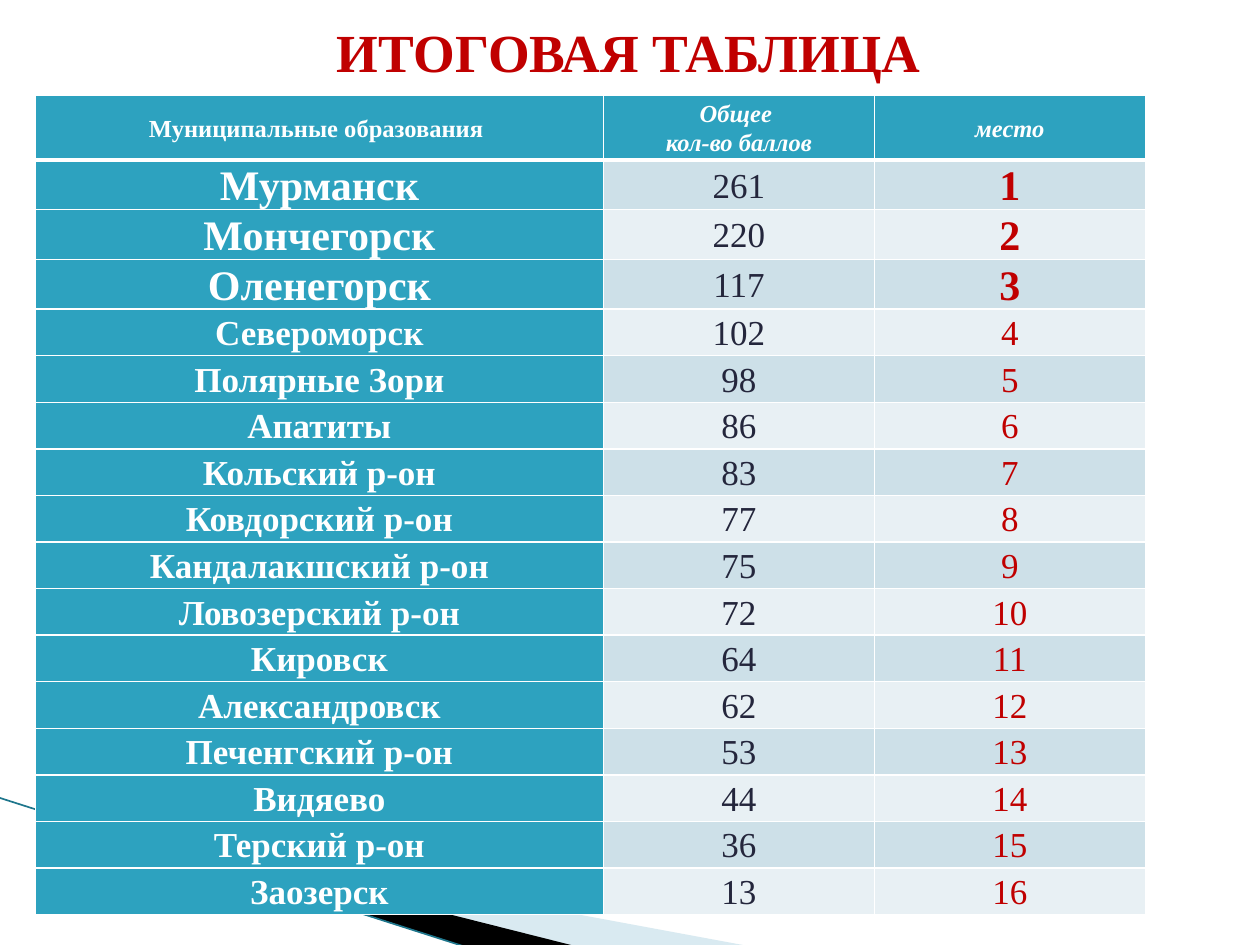
from lxml import etree
from pptx import Presentation
from pptx.dml.color import RGBColor
from pptx.enum.shapes import MSO_CONNECTOR
from pptx.enum.text import MSO_ANCHOR, PP_ALIGN
from pptx.oxml.ns import qn
from pptx.util import Inches, Pt

COLORS = {
    "title": "C00000", "place": "C00000", "score": "24263C",
    "white": "FFFFFF", "teal": "2DA2BF", "odd": "CDE0E8", "even": "E8F0F4",
    "ribbon": "A0CBDC", "black": "000000", "edge": "1E768C",
}
FONT = "Times New Roman"
HEADERS = ["Муниципальные образования ", "Общее \nкол-во баллов", "место"]
RESULTS = [
    ("Мурманск", 261), ("Мончегорск", 220), ("Оленегорск", 117),
    ("Североморск", 102), ("Полярные Зори", 98), ("Апатиты", 86),
    ("Кольский р-он", 83), ("Ковдорский р-он", 77),
    ("Кандалакшский р-он", 75), ("Ловозерский р-он", 72),
    ("Кировск", 64), ("Александровск", 62), ("Печенгский р-он", 53),
    ("Видяево", 44), ("Терский р-он", 36), ("Заозерск", 13),
]
WINNERS = 3


def rgb(name):
    return RGBColor.from_string(COLORS[name])


def add_text(tf, text, size=20, color="white", bold=False, italic=False,
             spacing=None):
    tf.word_wrap = True
    for i, line in enumerate(text.split("\n")):
        p = tf.paragraphs[0] if i == 0 else tf.add_paragraph()
        p.alignment = PP_ALIGN.CENTER
        if spacing:
            p.line_spacing = spacing
        r = p.add_run()
        r.text = line
        r.font.name, r.font.size = FONT, Pt(size)
        r.font.bold, r.font.italic = bold, italic
        r.font.color.rgb = rgb(color)


def set_borders(cell, top=1, bottom=1):
    tcPr = cell._tc.get_or_add_tcPr()
    widths = {"a:lnL": 1, "a:lnR": 1, "a:lnT": top, "a:lnB": bottom}
    for tag, width in widths.items():
        ln = etree.SubElement(tcPr, qn(tag), w=str(Pt(width)))
        fill = etree.SubElement(ln, qn("a:solidFill"))
        etree.SubElement(fill, qn("a:srgbClr"), val=COLORS["white"])


def add_wedge(s, x, y, points, color, alpha=None):
    corners = [(Inches(x + dx), Inches(y + dy)) for dx, dy in points]
    builder = s.shapes.build_freeform(*corners[0])
    builder.add_line_segments(corners[1:])
    sp = builder.convert_to_shape()
    sp.shadow.inherit = False
    sp.fill.solid()
    sp.fill.fore_color.rgb = rgb(color)
    sp.line.fill.background()
    if alpha:
        clr = sp._element.spPr.find(".//" + qn("a:srgbClr"))
        etree.SubElement(clr, qn("a:alpha"), val=str(alpha * 1000))


def add_ribbons(s, x, y):
    """Slanted bands at the lower left corner."""
    add_wedge(s, x, y, [(0.56, 0.18), (5.96, 1.18), (4.57, 1.18), (0.56, 0.17)],
              "ribbon", alpha=40)
    add_wedge(s, x, y, [(0.54, 0.16), (4.58, 1.18), (3.73, 1.19), (0.55, 0.17)],
              "black")
    edge = s.shapes.add_connector(MSO_CONNECTOR.STRAIGHT, Inches(x), Inches(y),
                                  Inches(x + 3.72), Inches(y + 1.19))
    edge.line.color.rgb = rgb("edge")
    edge.line.width = Pt(0.95)
    etree.SubElement(edge._element.spPr, qn("a:effectLst"))


def add_cell(cell, text, fill, top=1, bottom=1, **fmt):
    cell.margin_left = cell.margin_right = Inches(0.07)
    cell.margin_top = cell.margin_bottom = 0
    cell.vertical_anchor = MSO_ANCHOR.MIDDLE
    set_borders(cell, top, bottom)
    cell.fill.solid()
    cell.fill.fore_color.rgb = rgb(fill)
    add_text(cell.text_frame, text, spacing=1.07, **fmt)


def add_results(s, x, y, w, h):
    """Table of municipalities, ranked by score."""
    table = s.shapes.add_table(len(RESULTS) + 1, len(HEADERS), Inches(x),
                               Inches(y), Inches(w), Inches(h)).table
    for col, width in zip(table.columns, (w - 4.3, 2.15, 2.15)):
        col.width = Inches(width)
    for i, row in enumerate(table.rows):
        row.height = Inches(0.37 if i else 0.51)

    # Header row
    for c, text in enumerate(HEADERS):
        add_cell(table.cell(0, c), text, "teal", bottom=3, size=14,
                 bold=True, italic=c > 0)

    # One row per municipality, the winners larger
    for place, (name, score) in enumerate(RESULTS, 1):
        winner = place <= WINNERS
        size = 24 if winner else 20
        band = "odd" if place % 2 else "even"
        top = 3 if place == 1 else 1
        add_cell(table.cell(place, 0), name, "teal", top, size=size, bold=True)
        add_cell(table.cell(place, 1), str(score), band, top, color="score")
        add_cell(table.cell(place, 2), str(place), band, top, size=size,
                 color="place", bold=winner)


def add_title(s, x, y, w, h):
    tf = s.shapes.add_textbox(Inches(x), Inches(y), Inches(w),
                              Inches(h)).text_frame
    tf.vertical_anchor = MSO_ANCHOR.MIDDLE
    add_text(tf, "ИТОГОВАЯ ТАБЛИЦА", size=30.6, color="title", bold=True)


def main():
    prs = Presentation()
    prs.slide_width, prs.slide_height = Inches(10), Inches(7.5)
    s = prs.slides.add_slide(prs.slide_layouts[6])
    add_ribbons(s, -0.01, 6.33)
    add_results(s, 0.28, 0.76, 8.81, 6.43)
    add_title(s, 0.49, 0.13, 9, 0.55)
    prs.save("out.pptx")


if __name__ == "__main__":
    main()
